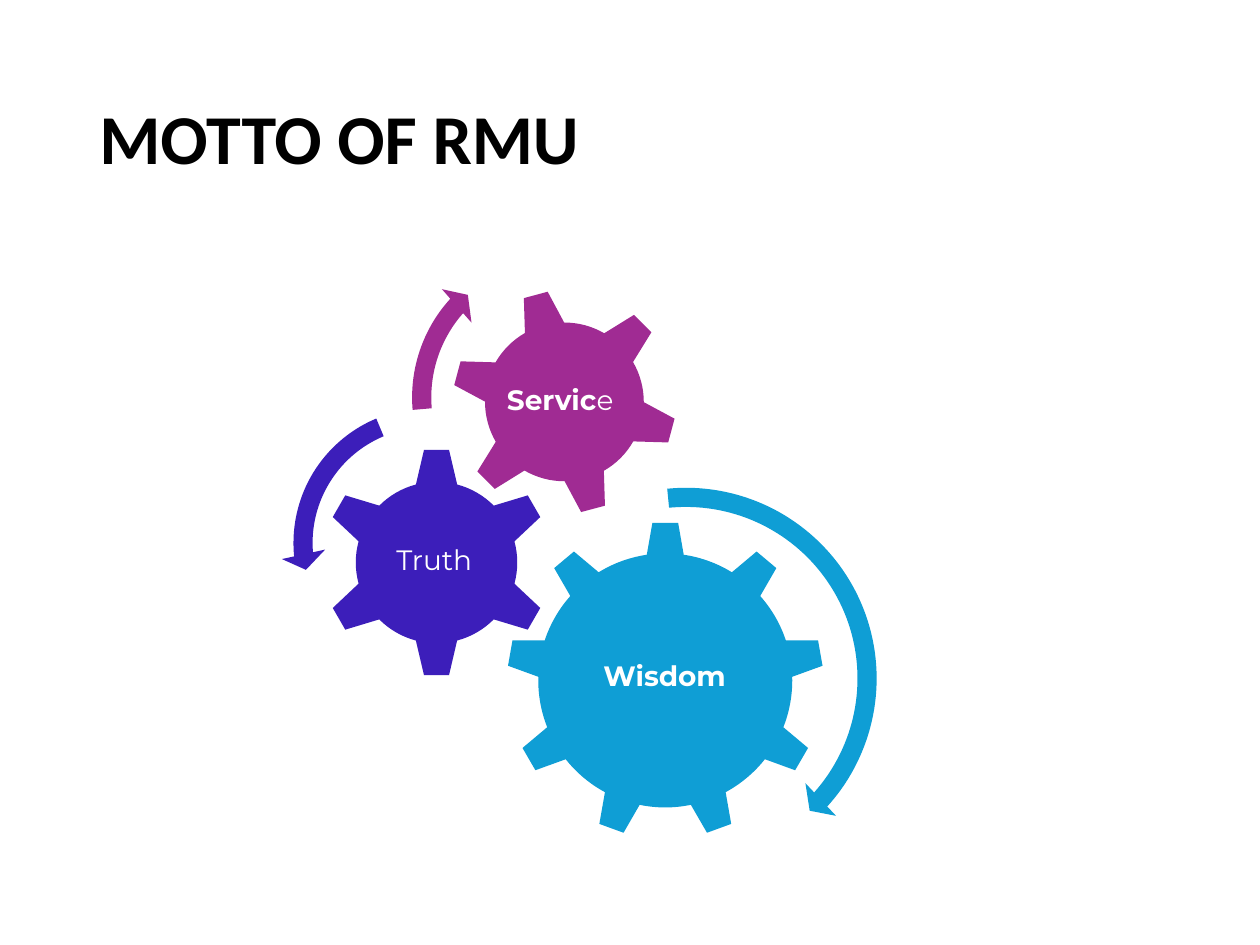
from pptx import Presentation
from pptx.dml.color import RGBColor
from pptx.enum.shapes import MSO_SHAPE as Preset
from pptx.enum.text import MSO_ANCHOR as Anchor, PP_ALIGN as Align
from pptx.util import Inches, Pt

BLACK = RGBColor(0x00, 0x00, 0x00)
WHITE = RGBColor(0xFF, 0xFF, 0xFF)
BLUE = RGBColor(0x0F, 0x9E, 0xD5)
INDIGO = RGBColor(0x3C, 0x1E, 0xBA)
PURPLE = RGBColor(0xA0, 0x2B, 0x93)

# preset, left, top, size, rotation, colour, label box, label runs (text, bold)
GEARS = [
    (Preset.GEAR_9, 4.02, 4.14, 2.52, 0, BLUE,
     (4.52, 4.73, 1.51, 1.3), [("Wisdom", True)]),
    (Preset.GEAR_6, 2.55, 3.55, 1.83, 0, INDIGO,
     (3.02, 4.01, 0.91, 0.9), [("Truth ", False)]),
    (Preset.GEAR_6, 3.58, 2.29, 1.8, 345, PURPLE,
     (3.97, 2.68, 1.01, 1.01), [("Servic", True), ("e ", False)]),
]

# preset, left, top, size, colour, adjustments
ARROWS = [
    (Preset.CIRCULAR_ARROW, 3.83, 3.77, 3.23, BLUE,
     (0.047, 2.99, 25.16, 158.61, 0.055)),
    (Preset.LEFT_CIRCULAR_ARROW, 2.23, 3.14, 2.34, INDIGO,
     (0.065, 4.3, 104.89, 148.38, 0.075)),
    (Preset.CIRCULAR_ARROW, 3.17, 1.89, 2.53, PURPLE,
     (0.06, 3.94, 133.14, 105.08, 0.07)),
]


def add_square_shape(shapes, preset, left, top, size, color):
    shape = shapes.add_shape(
        preset, Inches(left), Inches(top), Inches(size), Inches(size))
    shape.shadow.inherit = False
    shape.fill.solid()
    shape.fill.fore_color.rgb = color
    shape.line.fill.background()
    return shape


def add_text(shapes, box, runs, font_name, size, color):
    """Add a middle-anchored text box; runs are (text, bold) pairs."""
    text_box = shapes.add_textbox(*[Inches(value) for value in box])
    frame = text_box.text_frame
    frame.word_wrap = True
    frame.vertical_anchor = Anchor.MIDDLE
    paragraph = frame.paragraphs[0]
    paragraph.line_spacing = 0.9
    for text, bold in runs:
        run = paragraph.add_run()
        run.text = text
        run.font.name = font_name
        run.font.size = Pt(size)
        run.font.bold = bold
        run.font.color.rgb = color
    return frame


presentation = Presentation()
presentation.slide_width = Inches(10)
presentation.slide_height = Inches(7.5)
slide = presentation.slides.add_slide(presentation.slide_layouts[6])

add_text(slide.shapes, (0.69, 0.4, 8.62, 1.45), [("MOTTO OF RMU", True)],
         "Calibri", 40, BLACK)

diagram = slide.shapes.add_group_shape().shapes

for preset, left, top, size, rotation, color, label_box, runs in GEARS:
    gear = add_square_shape(diagram, preset, left, top, size, color)
    gear.rotation = rotation
    label = add_text(diagram, label_box, runs, "Montserrat", 16, WHITE)
    label.margin_left = label.margin_right = Inches(0.02)
    label.margin_top = label.margin_bottom = Inches(0.02)
    label.paragraphs[0].alignment = Align.CENTER

for preset, left, top, size, color, adjustments in ARROWS:
    arrow = add_square_shape(diagram, preset, left, top, size, color)
    for index, value in enumerate(adjustments):
        arrow.adjustments[index] = value

presentation.save("out.pptx")
